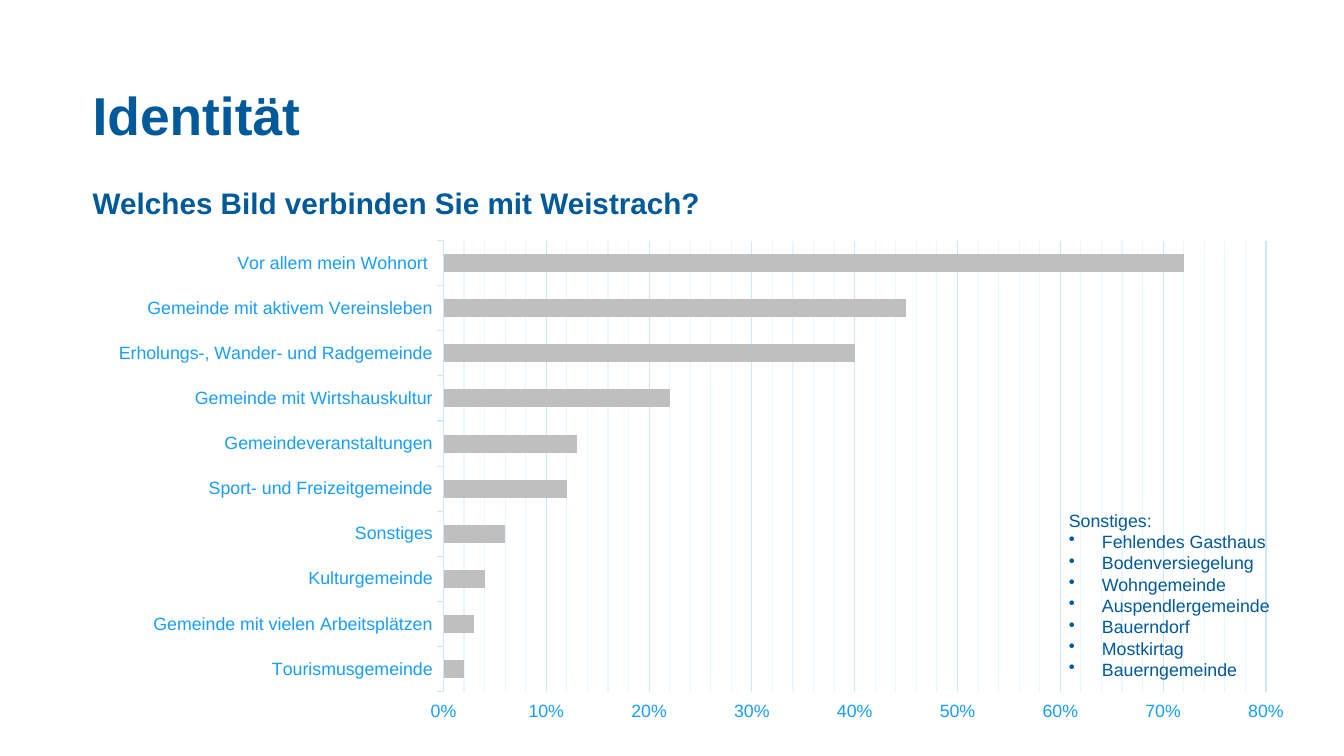
"""Build the slide on how residents see their municipality."""
from copy import deepcopy

from lxml import etree
from pptx import Presentation, util as u
from pptx.chart.data import CategoryChartData
from pptx.dml.color import RGBColor
from pptx.enum import chart as ch, text as t
from pptx.oxml import parse_xml
from pptx.oxml.ns import nsdecls, qn

WIDE, HIGH = u.Inches(12.6), u.Inches(7.09)
FONT = "Arial"
HUES = {"title": "005A99", "note": "00599A", "label": "189DFF",
        "grid": "CAE8FF", "minor": "EAF6FF", "bar": "BFBFBF"}
SHARES = [("Tourismusgemeinde", 0.02),
          ("Gemeinde mit vielen Arbeitsplätzen", 0.03),
          ("Kulturgemeinde", 0.04),
          ("Sonstiges", 0.06),
          ("Sport- und Freizeitgemeinde", 0.12),
          ("Gemeindeveranstaltungen", 0.13),
          ("Gemeinde mit Wirtshauskultur", 0.22),
          ("Erholungs-, Wander- und Radgemeinde", 0.4),
          ("Gemeinde mit aktivem Vereinsleben", 0.45),
          ("Vor allem mein Wohnort ", 0.72)]
OTHERS = ["Fehlendes Gasthaus", "Bodenversiegelung", "Wohngemeinde",
          "Auspendlergemeinde", "Bauerndorf", "Mostkirtag", "Bauerngemeinde"]


def area(left, top, width, height):
    """Turn percentages of the slide into a box in EMU."""
    return [int(part * side / 100) for part, side in
            zip((left, top, width, height), (WIDE, HIGH, WIDE, HIGH))]


def style(font, size, hue, bold=False):
    """Set face, size, colour and weight."""
    font.name, font.size, font.bold = FONT, u.Pt(size), bold
    font.color.rgb = RGBColor.from_string(HUES[hue])


def stroke(line, hue):
    """Draw a thin line in a named colour."""
    line.width = u.Pt(0.75)
    line.color.rgb = RGBColor.from_string(HUES[hue])


def heading(shape, box, words, size, pitch):
    """Place and fill a bold heading without margins."""
    shape.left, shape.top, shape.width, shape.height = box
    frame = shape.text_frame
    frame.text = words
    frame.word_wrap, frame.auto_size = True, t.MSO_AUTO_SIZE.NONE
    frame.vertical_anchor = t.MSO_ANCHOR.TOP
    frame.margin_left = frame.margin_right = 0
    frame.margin_top = frame.margin_bottom = 0
    para = frame.paragraphs[0]
    para.alignment, para.line_spacing = t.PP_ALIGN.LEFT, u.Pt(pitch)
    style(para.font, size, "title", True)


def layout(chart, **spots):
    """Fix the inner plot area by shares of the chart."""
    plot = chart.element.find(".//" + qn("c:plotArea"))
    for old in plot.findall(qn("c:layout")):
        plot.remove(old)
    node = parse_xml(f'<c:layout {nsdecls("c")}><c:manualLayout>'
                     '<c:layoutTarget val="inner"/><c:xMode val="edge"/>'
                     '<c:yMode val="edge"/></c:manualLayout></c:layout>')
    for name, share in spots.items():
        etree.SubElement(node[0], qn("c:" + name)).set("val", str(share))
    plot.insert(0, node)


def grid(chart, axis):
    """Show major gridlines and paler minor ones."""
    axis.has_major_gridlines = axis.has_minor_gridlines = True
    stroke(axis.major_gridlines.format.line, "grid")
    major, minor = (chart.element.find(f".//{qn(name)}") for name in
                    ("c:majorGridlines", "c:minorGridlines"))
    look = deepcopy(major[0])
    look.find(".//" + qn("a:srgbClr")).set("val", HUES["minor"])
    minor.append(look)


def bars(slide, box):
    """Add the bar chart of answers."""
    data = CategoryChartData(number_format="0%")
    data.categories = [name for name, _ in SHARES]
    data.add_series("Series 1", [share for _, share in SHARES])
    chart = slide.shapes.add_chart(ch.XL_CHART_TYPE.BAR_STACKED, *box, data).chart
    chart.has_legend = chart.has_title = False
    style(chart.font, 10, "note")
    layout(chart, x=0.29, y=0.02, w=0.68, h=0.9)
    plot = chart.plots[0]
    plot.gap_width, plot.overlap, plot.vary_by_categories = 150, 100, False
    fill = plot.series[0].format.fill
    fill.solid()
    fill.fore_color.rgb = RGBColor.from_string(HUES["bar"])
    cats, vals = chart.category_axis, chart.value_axis
    for axis in (cats, vals):
        style(axis.tick_labels.font, 12, "label")
        axis.major_tick_mark = ch.XL_TICK_MARK.OUTSIDE
    stroke(cats.format.line, "grid")
    vals.format.line.fill.background()
    vals.minimum_scale, vals.maximum_scale = 0, 0.8
    vals.major_unit, vals.minor_unit = 0.1, 0.02
    vals.tick_labels.number_format = "0%"
    vals.tick_labels.number_format_is_linked = False
    grid(chart, vals)


def bullet(para):
    """Give a paragraph a hanging bullet."""
    props = para._p.get_or_add_pPr()
    props.set("marL", str(u.Inches(0.31)))
    props.set("indent", str(-u.Inches(0.31)))
    etree.SubElement(props, qn("a:buChar")).set("char", "•")


def notes(slide, box, head, items):
    """Add a text box with a lead line and bullets."""
    frame = slide.shapes.add_textbox(*box).text_frame
    frame.word_wrap = True
    frame.text = "\n".join([head, *items])
    for para in frame.paragraphs[1:]:
        bullet(para)
    for para in frame.paragraphs:
        style(para.font, 12, "note")


def main():
    """Build and save the slide."""
    deck = Presentation()
    deck.slide_width, deck.slide_height = WIDE, HIGH
    slide = deck.slides.add_slide(deck.slide_layouts.get_by_name("Title Only"))
    heading(slide.shapes.title, area(6.9, 11.85, 61.1, 7.5), "Identität", 36, 38)
    box = area(6.9, 24.25, 86, 4.95)
    heading(slide.shapes.add_textbox(*box), box,
            "Welches Bild verbinden Sie mit Weistrach?", 20, 25)
    bars(slide, area(6.9, 30.5, 90, 66.3))
    notes(slide, area(78.75, 66.7, 17.2, 24.25), "Sonstiges:", OTHERS)
    deck.save("out.pptx")


if __name__ == "__main__":
    main()
